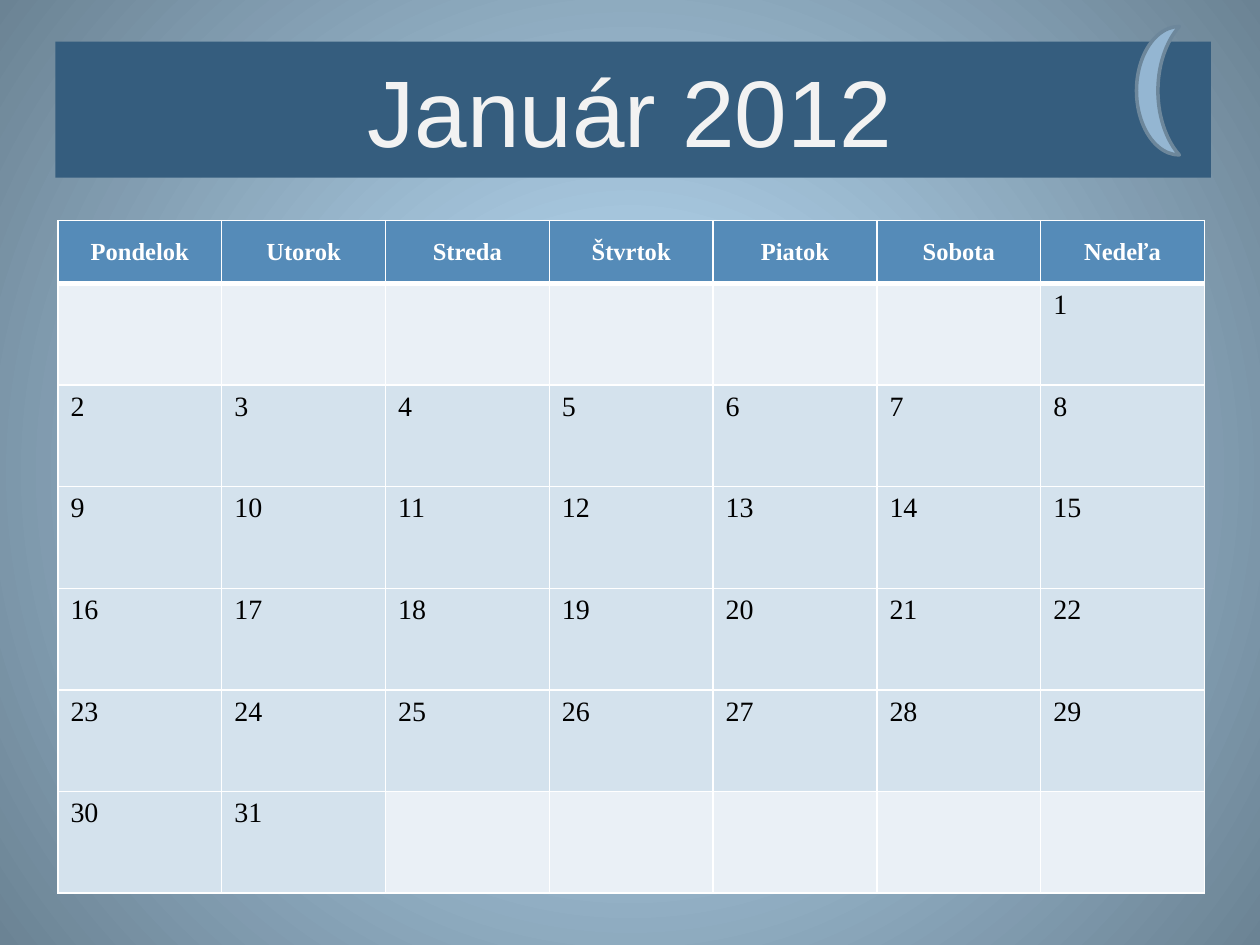
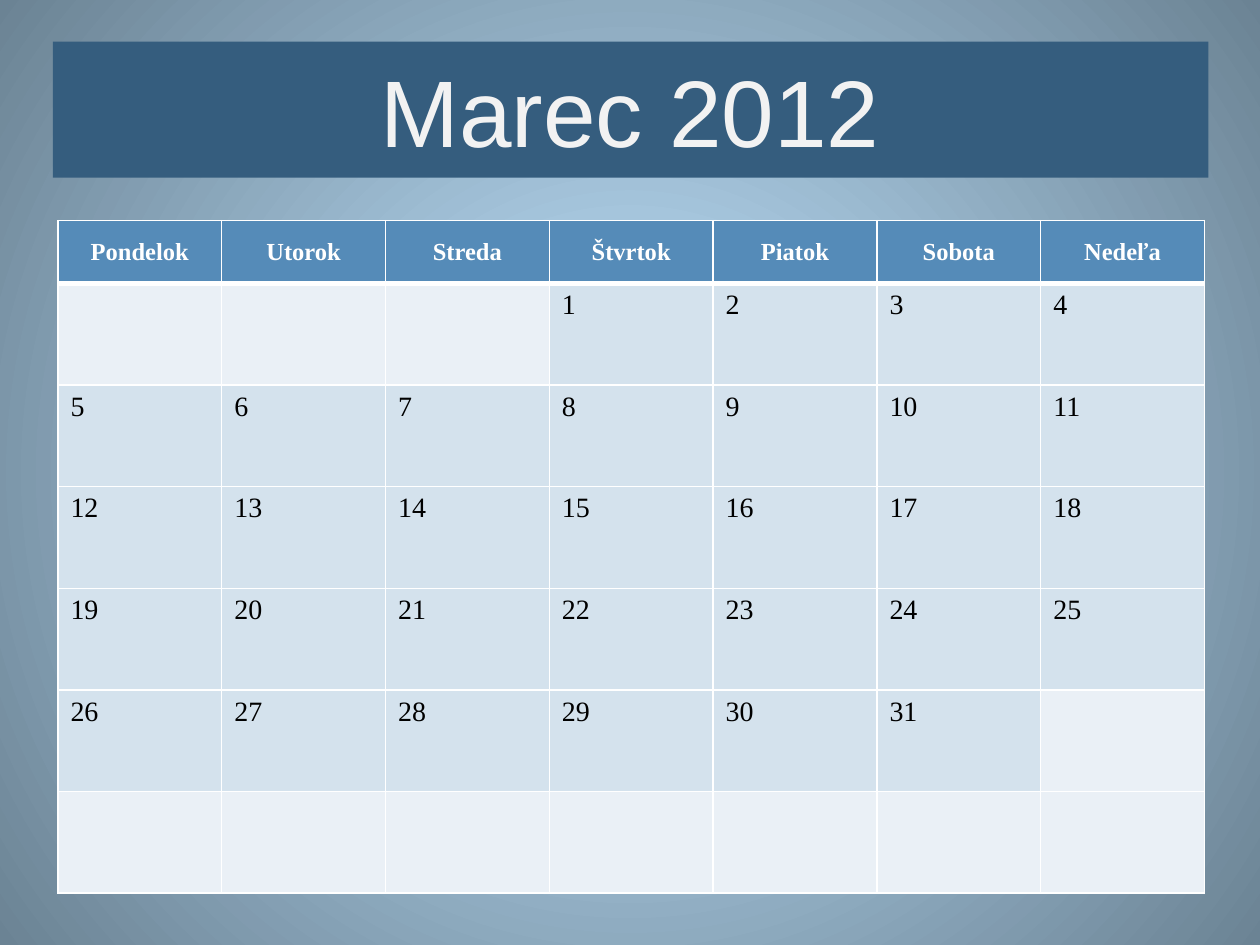
from dataclasses import dataclass

from pptx import Presentation
from pptx.dml.color import RGBColor as RGB
from pptx.enum.shapes import MSO_SHAPE as SHAPE
from pptx.enum.text import MSO_ANCHOR as ANCHOR, MSO_AUTO_SIZE as AUTO, PP_ALIGN as ALIGN
from pptx.oxml.ns import qn
from pptx.util import Inches, Pt
from lxml.etree import SubElement

DAYS = ["Pondelok", "Utorok", "Streda", "Štvrtok", "Piatok", "Sobota", "Nedeľa"]
WEEKS = 6


@dataclass(frozen=True)
class Theme:
    glow: str = "C1E5FF"
    edge: str = "6B8394"
    band: str = "355D7E"
    title: str = "F2F2F2"
    header: str = "558BB8"
    day: str = "D4E2ED"
    blank: str = "EAF0F6"
    grid: str = "FFFFFF"
    ink: str = "000000"
    moon: str = "94B6D2"
    moon_line: str = "6D879B"
    title_font: str = "Arial"
    table_font: str = "Times New Roman"
    title_pt: int = 54
    header_pt: int = 14
    day_pt: int = 16


def rgb(color):
    return RGB.from_string(color)


class Calendar:
    def __init__(self, prs, theme):
        self.prs, self.theme, self.slide = prs, theme, None

    def background(self):
        """Radial gradient on the master, shared by all slides."""
        master = self.prs.slide_master
        fill = master.background.fill
        fill.gradient()
        for stop, color in zip(fill.gradient_stops, (self.theme.glow, self.theme.edge)):
            stop.color.rgb = rgb(color)
        grad = next(master.element.iter(qn("a:gradFill")))
        grad.remove(grad.find(qn("a:lin")))
        circle = SubElement(grad, qn("a:path"), path="circle")
        SubElement(circle, qn("a:fillToRect"), {side: "50000" for side in "ltrb"})

    def new_slide(self):
        self.slide = self.prs.slides.add_slide(self.prs.slide_layouts[5])

    def text(self, tf, text, font, size, color, align, bold=False):
        p = tf.paragraphs[0]
        p.alignment = align
        r = p.add_run()
        r.text = text
        r.font.name, r.font.size, r.font.bold = font, Pt(size), bold
        r.font.color.rgb = rgb(color)

    def shape(self, kind, left, top, width, height, fill, line=None):
        sp = self.slide.shapes.add_shape(
            kind, Inches(left), Inches(top), Inches(width), Inches(height))
        sp.shadow.inherit = False
        sp.fill.solid()
        sp.fill.fore_color.rgb = rgb(fill)
        if line:
            sp.line.color.rgb = rgb(line)
            sp.line.width = Pt(2)
        else:
            sp.line.fill.background()

    def title(self, text, band_left):
        t = self.theme
        self.shape(SHAPE.RECTANGLE, band_left, 0.33, 9.17, 1.08, t.band)
        sp = self.slide.shapes.title
        sp.left, sp.top, sp.width, sp.height = map(Inches, (0.5, 0.33, 9, 1.08))
        tf = sp.text_frame
        tf.word_wrap, tf.auto_size = True, AUTO.NONE
        tf.vertical_anchor = ANCHOR.MIDDLE
        self.text(tf, text, t.title_font, t.title_pt, t.title, ALIGN.CENTER)
        # Bring the title in front of its band
        self.slide.shapes.element.append(sp.element)

    def moon(self):
        self.shape(SHAPE.MOON, 9.02, 0.21, 0.34, 1.02, self.theme.moon, self.theme.moon_line)

    def cell(self, cell, fill, top=1, bottom=1):
        # Borders come before the fill in the cell properties
        tc_pr = cell._tc.get_or_add_tcPr()
        for side, width in zip("LRTB", (1, 1, top, bottom)):
            ln = SubElement(tc_pr, qn(f"a:ln{side}"), w=str(Pt(width)))
            SubElement(SubElement(ln, qn("a:solidFill")), qn("a:srgbClr"), val=self.theme.grid)
        cell.fill.solid()
        cell.fill.fore_color.rgb = rgb(fill)

    def month(self, first_column, length):
        """Weekday header and a grid of days; first_column holds day 1."""
        t = self.theme
        width, height, header_height = 9.1, 5.34, 0.5
        table = self.slide.shapes.add_table(
            WEEKS + 1, len(DAYS), Inches(0.46), Inches(1.75), Inches(width), Inches(height)).table
        for col in table.columns:
            col.width = Inches(width / len(DAYS))
        for row in table.rows:
            row.height = Inches((height - header_height) / WEEKS)
        table.rows[0].height = Inches(header_height)

        # Header row
        for col, name in enumerate(DAYS):
            cell = table.cell(0, col)
            self.cell(cell, t.header, bottom=3)
            cell.vertical_anchor = ANCHOR.MIDDLE
            self.text(cell.text_frame, name, t.table_font, t.header_pt, t.grid,
                      ALIGN.CENTER, bold=True)

        # Days
        for i in range(WEEKS * len(DAYS)):
            week, col = divmod(i, len(DAYS))
            day = i - first_column + 1
            in_month = 1 <= day <= length
            cell = table.cell(week + 1, col)
            self.cell(cell, t.day if in_month else t.blank, top=1 if week else 3)
            if in_month:
                self.text(cell.text_frame, str(day), t.table_font, t.day_pt, t.ink, ALIGN.LEFT)


def main():
    prs = Presentation()
    prs.slide_width, prs.slide_height = Inches(10), Inches(7.5)
    cal = Calendar(prs, Theme())
    cal.background()

    # January
    cal.new_slide()
    cal.month(first_column=6, length=31)
    cal.title("Január 2012", band_left=0.44)
    cal.moon()

    # March
    cal.new_slide()
    cal.month(first_column=3, length=31)
    cal.title("Marec 2012", band_left=0.42)

    prs.save("out.pptx")


if __name__ == "__main__":
    main()
